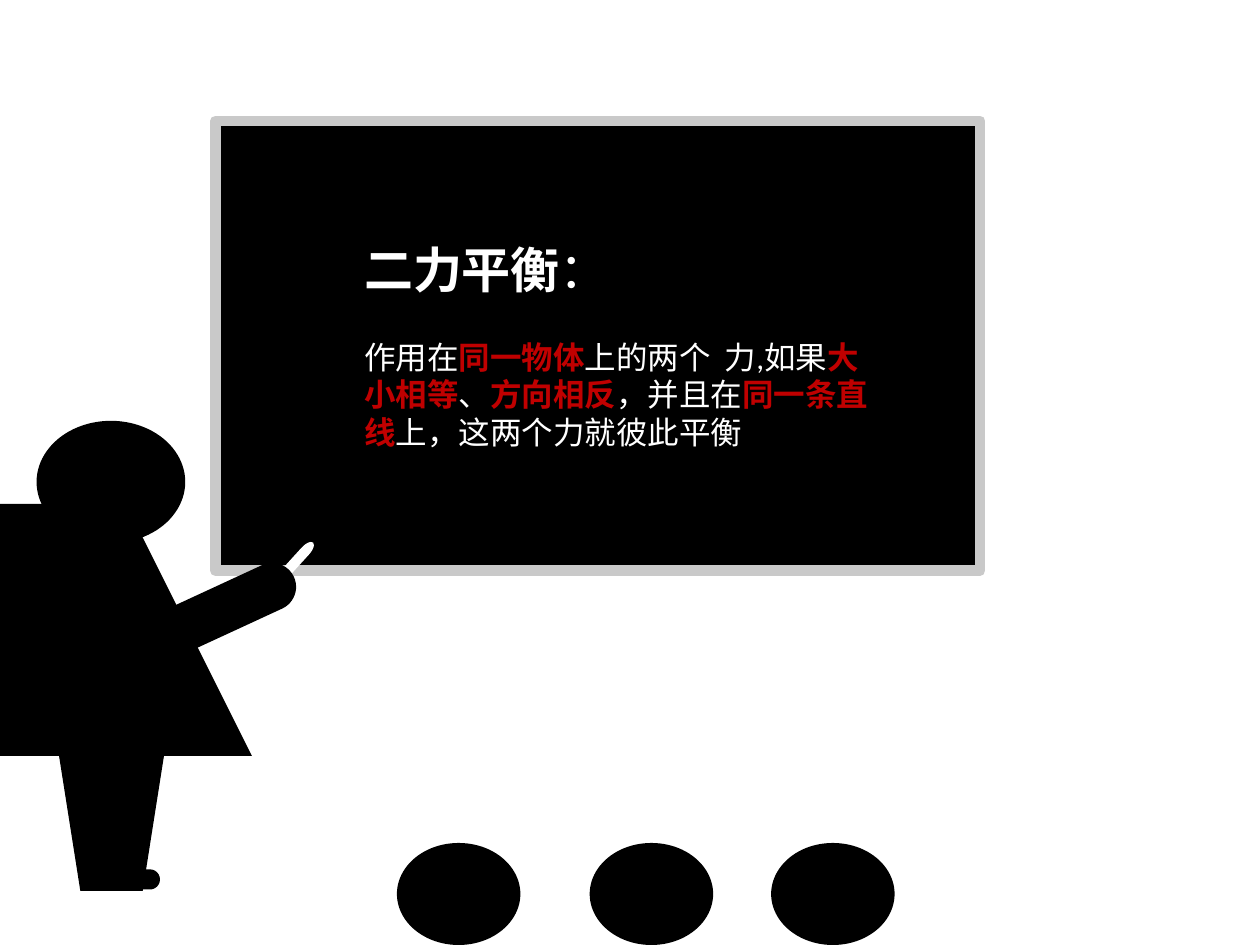
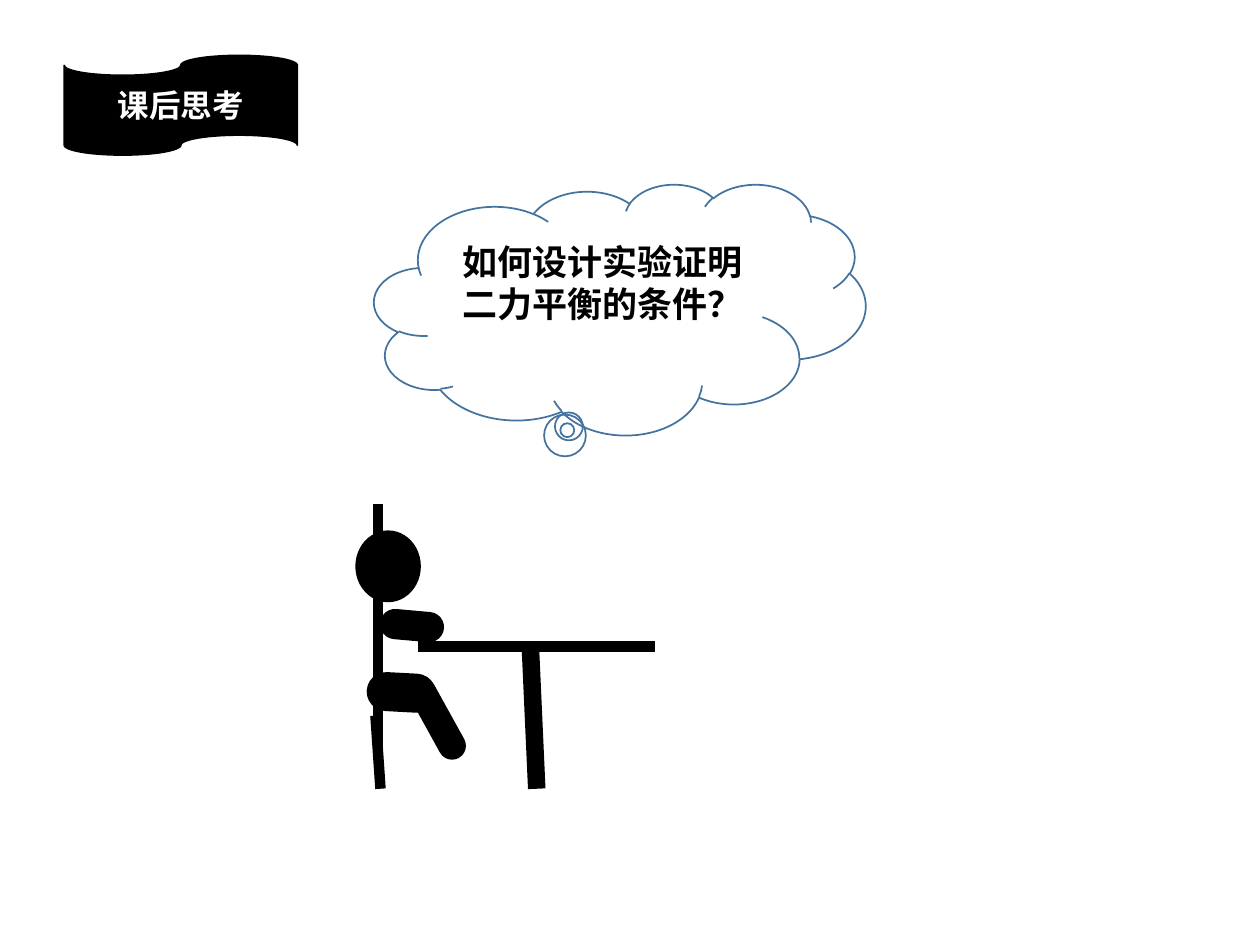
from lxml.etree import SubElement
from pptx import Presentation
from pptx.dml.color import RGBColor
from pptx.enum.shapes import MSO_CONNECTOR, MSO_SHAPE
from pptx.enum.text import MSO_ANCHOR, MSO_AUTO_SIZE, PP_ALIGN
from pptx.oxml.ns import qn
from pptx.util import Inches, Pt

BLACK, WHITE, RED = "000000", "FFFFFF", "C00000"
FRAME_GREY, CLOUD_BLUE = "C9C9C9", "43739E"
LATIN_FONT, CHINESE_FONT = "Calibri", "Noto Sans CJK JP"
TITLE_AND_BODY, TITLE_ONLY = 1, 5


def hex_color(value):
    return RGBColor.from_string(value)


def paint(shape, fill=None, line=None, line_width=1):
    """Set fill and outline; None leaves either one empty."""
    shape.shadow.inherit = False
    if fill:
        shape.fill.solid()
        shape.fill.fore_color.rgb = hex_color(fill)
    else:
        shape.fill.background()
    if line:
        shape.line.color.rgb = hex_color(line)
        shape.line.width = Pt(line_width)
    else:
        shape.line.fill.background()


def add_part(shapes, kind, origin, left, top, width, height,
             rotation=0, adjustments=(), fill=BLACK, **outline):
    """Add a preset shape whose left and top are measured from origin."""
    shape = shapes.add_shape(kind, Inches(origin[0] + left), Inches(origin[1] + top),
                             Inches(width), Inches(height))
    shape.rotation = rotation
    for index, value in enumerate(adjustments):
        shape.adjustments[index] = value
    paint(shape, fill, **outline)
    return shape


def add_limb(shapes, origin, left, top, width, height, rotation=0):
    return add_part(shapes, MSO_SHAPE.ROUNDED_RECTANGLE, origin, left, top,
                    width, height, rotation, adjustments=(0.5,))


def add_outline(shapes, origin, points, close=True, **colors):
    placed = [(origin[0] + x, origin[1] + y) for x, y in points]
    builder = shapes.build_freeform(*placed[0], scale=Inches(1))
    builder.add_line_segments(placed[1:], close=close)
    paint(builder.convert_to_shape(), **colors)


def add_bar(shapes, origin, start, end, width):
    ends = [Inches(origin[axis] + point[axis]) for point in (start, end) for axis in (0, 1)]
    bar = shapes.add_connector(MSO_CONNECTOR.STRAIGHT, *ends)
    bar.line.color.rgb = hex_color(BLACK)
    bar.line.width = Pt(width)
    SubElement(bar._element.spPr, qn("a:effectLst"))


def write_text(shape, runs, size, font=LATIN_FONT, align=PP_ALIGN.LEFT,
               anchor=MSO_ANCHOR.TOP, bottom_margin=0.05):
    """Write one paragraph from (text, colour, bold) runs."""
    frame = shape.text_frame
    frame.word_wrap = True
    frame.auto_size = MSO_AUTO_SIZE.NONE
    frame.vertical_anchor = anchor
    frame.margin_bottom = Inches(bottom_margin)
    paragraph = frame.paragraphs[0]
    paragraph.alignment = align
    paragraph.space_before = Pt(0)
    for text, color, bold in runs:
        run = paragraph.add_run()
        run.text = text
        run.font.size = Pt(size)
        run.font.name = font
        run.font.bold = bold
        run.font.color.rgb = hex_color(color)
        east_asian = SubElement(run._r.get_or_add_rPr(), qn("a:ea"))
        east_asian.set("typeface", font)
    return paragraph


def place(shape, left, top, width, height):
    shape.left, shape.top = Inches(left), Inches(top)
    shape.width, shape.height = Inches(width), Inches(height)


def bring_to_front(shape):
    tree = shape._element.getparent()
    tree.remove(shape._element)
    tree.append(shape._element)


def remove_bullet(paragraph):
    properties = paragraph._p.get_or_add_pPr()
    properties.set("marL", "0")
    properties.set("indent", "0")
    SubElement(properties, qn("a:buNone"))


def draw_blackboard(slide, left, top, width, height):
    add_part(slide.shapes, MSO_SHAPE.RECTANGLE, (left, top), 0, 0, width, height,
             line=FRAME_GREY, line_width=6)
    heading, definition = slide.shapes.title, slide.placeholders[1]
    place(heading, left + 1.08, top + 0.89, 4.31, 0.6)
    place(definition, left + 1.08, top + 1.67, 4.31, 1)
    write_text(heading, [("二力平衡", WHITE, True), ("：", WHITE, False)], 28)
    wording = ["作用在", "同一物体", "上的两个  力,如果", "大小相等", "、",
               "方向相反", "，并且在", "同一条直线", "上，这两个力就彼此平衡"]
    key_terms = wording[1::2]
    runs = [(text, RED if text in key_terms else WHITE, text in key_terms)
            for text in wording]
    remove_bullet(write_text(definition, runs, 18))
    for text_shape in (heading, definition):
        bring_to_front(text_shape)


def draw_teacher(slide, left, top):
    origin = (left, top)
    add_part(slide.shapes, MSO_SHAPE.FLOWCHART_TERMINATOR, origin,
             1.71, 1.14, 0.58, 0.08, rotation=312.3, fill=WHITE)
    teacher = slide.shapes.add_group_shape().shapes
    coat = [(0.08, 2.3), (0.18, 0.89), (0.86, 0.94), (1.27, 2.32), (1.25, 2.3)]
    add_outline(teacher, origin, coat, fill=BLACK)
    add_part(teacher, MSO_SHAPE.OVAL, origin, 0, 0, 1.18, 0.97)
    add_part(teacher, MSO_SHAPE.TRAPEZOID, origin, 0.1, 2.16, 0.99, 1.57, rotation=180)
    add_limb(teacher, origin, 0.37, 3.56, 0.61, 0.16)
    add_limb(teacher, origin, 1.09, 0.75, 0.38, 1.68, 245.2)


def draw_students(slide, left, top):
    for offset in (0, 1.53, 2.97):
        add_part(slide.shapes, MSO_SHAPE.OVAL, (left, top), offset, 0, 0.98, 0.81)


def draw_title_tape(slide, left, top, width, height):
    add_part(slide.shapes, MSO_SHAPE.FLOWCHART_PUNCHED_TAPE, (left, top), 0, 0,
             width, height, line=BLACK)
    title = slide.shapes.title
    place(title, left, top, width, height)
    write_text(title, [("课后思考", WHITE, True)], 18, font=CHINESE_FONT,
               align=PP_ALIGN.CENTER, anchor=MSO_ANCHOR.MIDDLE)
    bring_to_front(title)


def draw_student_at_desk(slide, left, top):
    origin = (left, top)
    student = slide.shapes.add_group_shape().shapes
    add_part(student, MSO_SHAPE.OVAL, origin, 0.22, 0, 0.52, 0.57)
    torso = [(0.75, 1.28), (0.62, 0.55), (0.37, 0.55), (0.32, 1.29)]
    add_outline(student, origin, torso, fill=BLACK)
    chair = [(0, 0), (0.19, 1.45), (0.74, 1.49)]
    add_outline(student, origin, chair, close=False, line=BLACK, line_width=6)
    add_bar(student, origin, (0.38, 1.47), (0.42, 2.05), 6)
    for limb in ((0.76, 1.14, 0.22, 0.71, 331.1),
                 (0.55, 0.5, 0.24, 0.51, 275.1),
                 (0.43, 1.01, 0.31, 0.55, 273.1)):
        add_limb(student, origin, *limb)
    add_bar(student, origin, (0.72, 0.92), (2.6, 0.92), 6)
    add_bar(student, origin, (1.61, 0.94), (1.66, 2.05), 10)


def draw_thought_cloud(slide, left, top, width, height):
    cloud = add_part(slide.shapes, MSO_SHAPE.CLOUD_CALLOUT, (left, top), 0, 0,
                     width, height, adjustments=(-0.107, 0.482), fill=None,
                     line=CLOUD_BLUE)
    write_text(cloud, [("如何设计实验证明二力平衡的条件？", BLACK, True)], 20,
               align=PP_ALIGN.CENTER, anchor=MSO_ANCHOR.MIDDLE, bottom_margin=0.39)


def build_definition_slide(presentation):
    slide = presentation.slides.add_slide(presentation.slide_layouts[TITLE_AND_BODY])
    draw_blackboard(slide, 1.71, 0.96, 6.07, 3.57)
    draw_teacher(slide, 0.29, 3.34)
    draw_students(slide, 3.15, 6.69)


def build_question_slide(presentation):
    slide = presentation.slides.add_slide(presentation.slide_layouts[TITLE_ONLY])
    draw_title_tape(slide, 0.51, 0.44, 1.85, 0.79)
    draw_student_at_desk(slide, 2.6, 4.21)
    draw_thought_cloud(slide, 2.97, 1.46, 3.9, 1.99)


def main():
    presentation = Presentation()
    presentation.slide_width, presentation.slide_height = Inches(10), Inches(7.5)
    build_definition_slide(presentation)
    build_question_slide(presentation)
    presentation.save("out.pptx")


if __name__ == "__main__":
    main()
